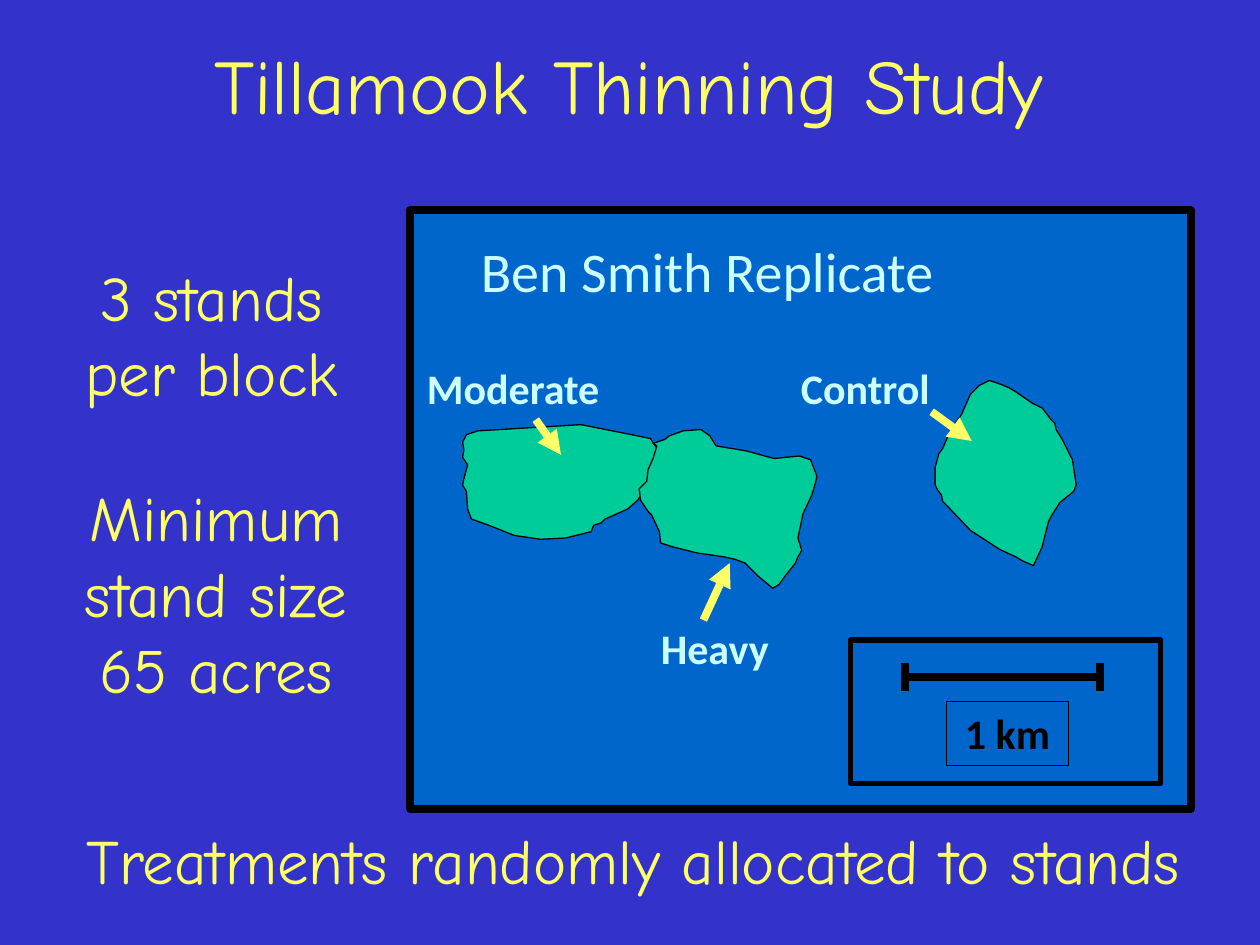
from pptx import Presentation
from pptx.dml.color import RGBColor
from pptx.enum.shapes import MSO_CONNECTOR, MSO_SHAPE
from pptx.enum.text import MSO_ANCHOR, MSO_AUTO_SIZE, PP_ALIGN
from pptx.oxml.ns import qn
from pptx.util import Cm, Pt
from lxml import etree

STRAIGHT = MSO_CONNECTOR.STRAIGHT
RECTANGLE = MSO_SHAPE.RECTANGLE
CENTER = PP_ALIGN.CENTER
TOP = MSO_ANCHOR.TOP
FIT_SHAPE = MSO_AUTO_SIZE.SHAPE_TO_FIT_TEXT

BLUE, MAP_BLUE, GREEN = "3333CC", "0066CC", "00CC99"
YELLOW, PALE, BLACK = "FFFF66", "CCFFFF", "000000"
HAND, SANS = "Comic Neue", "Calibri"
POINT_SCALE = Cm(2.54) / 100

STANDS = [
    ((0.99, 4.32), [
        (7, 32), (4, 43), (3, 48), (6, 53), (7, 67), (10, 75), (24, 80),
        (44, 88), (65, 91), (85, 90), (105, 85), (107, 80), (113, 78),
        (116, 75), (125, 71), (134, 67), (142, 60), (145, 55), (150, 47),
        (154, 35), (157, 25), (158, 20), (152, 11), (132, 7), (97, 0),
        (15, 5), (6, 8), (3, 14), (4, 20), (3, 26)]),
    ((4.55, 4.42), [
        (17, 13), (14, 23), (10, 32), (9, 41), (3, 47), (4, 56), (10, 65),
        (13, 68), (19, 81), (20, 90), (29, 93), (49, 98), (70, 101), (79, 103),
        (87, 106), (94, 113), (97, 116), (109, 126), (114, 123), (119, 116),
        (127, 106), (129, 101), (132, 96), (129, 86), (133, 67), (140, 52),
        (143, 42), (144, 37), (139, 24), (130, 21), (110, 23), (88, 17),
        (64, 13), (59, 5), (52, 0), (38, 1), (27, 5), (23, 8), (14, 11)]),
    ((10.54, 3.43), [
        (2, 83), (4, 87), (7, 91), (8, 96), (11, 99), (30, 119), (53, 134),
        (66, 140), (71, 143), (80, 147), (87, 132), (92, 112), (94, 108),
        (101, 97), (112, 88), (114, 83), (111, 63), (103, 47), (98, 39),
        (97, 34), (94, 31), (87, 22), (79, 18), (66, 9), (61, 6), (54, 3),
        (45, 0), (37, 4), (30, 11), (23, 27), (14, 40), (8, 54), (5, 58),
        (2, 69)]),
]
LABELS = [
    ("Moderate", (-0.05, 2.95, 4.27, 1.27)),
    ("Heavy", (4.65, 8.18, 3, 1.27)),
    ("Control", (7.42, 2.95, 3.53, 1.27)),
]
ARROWS = [
    (2.54, 4.22, 3.05, 4.93),
    (5.92, 8.26, 6.45, 7.11),
    (10.52, 4.06, 11.33, 4.65),
]


def color(value):
    return RGBColor.from_string(value)


def offset(box, place):
    return (box[0] + place[0], box[1] + place[1], *place[2:])


def write(frame, text, size, font, fill, bold=False):
    frame.word_wrap = False
    frame.auto_size = FIT_SHAPE
    frame.vertical_anchor = TOP
    for index, words in enumerate(text.split("\n")):
        para = frame.paragraphs[0] if index == 0 else frame.add_paragraph()
        para.alignment = CENTER
        span = para.add_run()
        span.text = words
        span.font.size = Pt(size)
        span.font.name = font
        span.font.bold = bold
        span.font.color.rgb = color(fill)


def add_text(page, box, text, **style):
    shape = page.shapes.add_textbox(*map(Cm, box))
    write(shape.text_frame, text, **style)


def paint(shape, fill, width):
    shape.shadow.inherit = False
    if fill:
        shape.fill.solid()
        shape.fill.fore_color.rgb = color(fill)
    else:
        shape.fill.background()
    shape.line.color.rgb = color(BLACK)
    shape.line.width = Pt(width)


def add_rectangle(page, box, width, fill=None):
    shape = page.shapes.add_shape(RECTANGLE, *map(Cm, box))
    paint(shape, fill, width)
    return shape


def add_line(page, box, ends, stroke, arrow=False):
    start, end = offset(box, ends[:2]), offset(box, ends[2:])
    line = page.shapes.add_connector(STRAIGHT, *map(Cm, start + end))
    line.line.color.rgb = color(stroke)
    line.line.width = Pt(4.5)
    if arrow:
        etree.SubElement(line.line._get_or_add_ln(), qn("a:tailEnd"), type="triangle")
    etree.SubElement(line._element.spPr, qn("a:effectLst"))


def add_stand(page, box, place, points):
    builder = page.shapes.build_freeform(*points[0], scale=POINT_SCALE)
    builder.add_line_segments(points[1:], close=True)
    left, top = offset(box, place)
    paint(builder.convert_to_shape(Cm(left), Cm(top)), GREEN, 0.75)


def add_scale(page, box):
    left, right, middle = 1.09, 5.03, 0.74
    add_line(page, box, (left, middle, right, middle), BLACK)
    for end in (left, right):
        add_line(page, box, (end, middle - 0.28, end, middle + 0.28), BLACK)
    label = add_rectangle(page, offset(box, (1.93, 1.24, 2.46, 1.3)), 0.75)
    write(label.text_frame, "1 km", size=24, font=SANS, fill=BLACK, bold=True)
    add_rectangle(page, box, 3)


def add_map(page, box):
    add_rectangle(page, box, 4.5, MAP_BLUE)
    for place, points in STANDS:
        add_stand(page, box, place, points)
    add_scale(page, offset(box, (8.89, 8.66, 6.25, 2.9)))
    add_text(page, offset(box, (0.64, 0.41, 10.72, 1.6)), "Ben Smith Replicate",
             size=32, font=SANS, fill=PALE)
    for text, place in LABELS:
        add_text(page, offset(box, place), text, size=24, font=SANS, fill=PALE, bold=True)
    for ends in ARROWS:
        add_line(page, box, ends, YELLOW, arrow=True)


def add_notes_column(page, box):
    facts = [
        ("3 stands\nper block", (0.18, 0, 5.99, 3.3)),
        ("Minimum\nstand size\n65 acres", (0, 4.45, 6.53, 4.83)),
    ]
    for text, place in facts:
        add_text(page, offset(box, place), text, size=36, font=HAND, fill=YELLOW)


def main():
    deck = Presentation()
    deck.slide_width, deck.slide_height = Cm(25.4), Cm(19.05)
    page = deck.slides.add_slide(deck.slide_layouts[6])
    page.background.fill.solid()
    page.background.fill.fore_color.rgb = color(BLUE)
    add_text(page, (3.35, 0.64, 18.67, 2.11), "Tillamook Thinning Study",
             size=44, font=HAND, fill=YELLOW)
    add_notes_column(page, (1.09, 5.08))
    add_text(page, (0.33, 16.43, 24.87, 1.78), "Treatments randomly allocated to stands",
             size=36, font=HAND, fill=YELLOW)
    add_map(page, (8.26, 4.24, 15.75, 12.07))
    deck.save("out.pptx")


if __name__ == "__main__":
    main()
